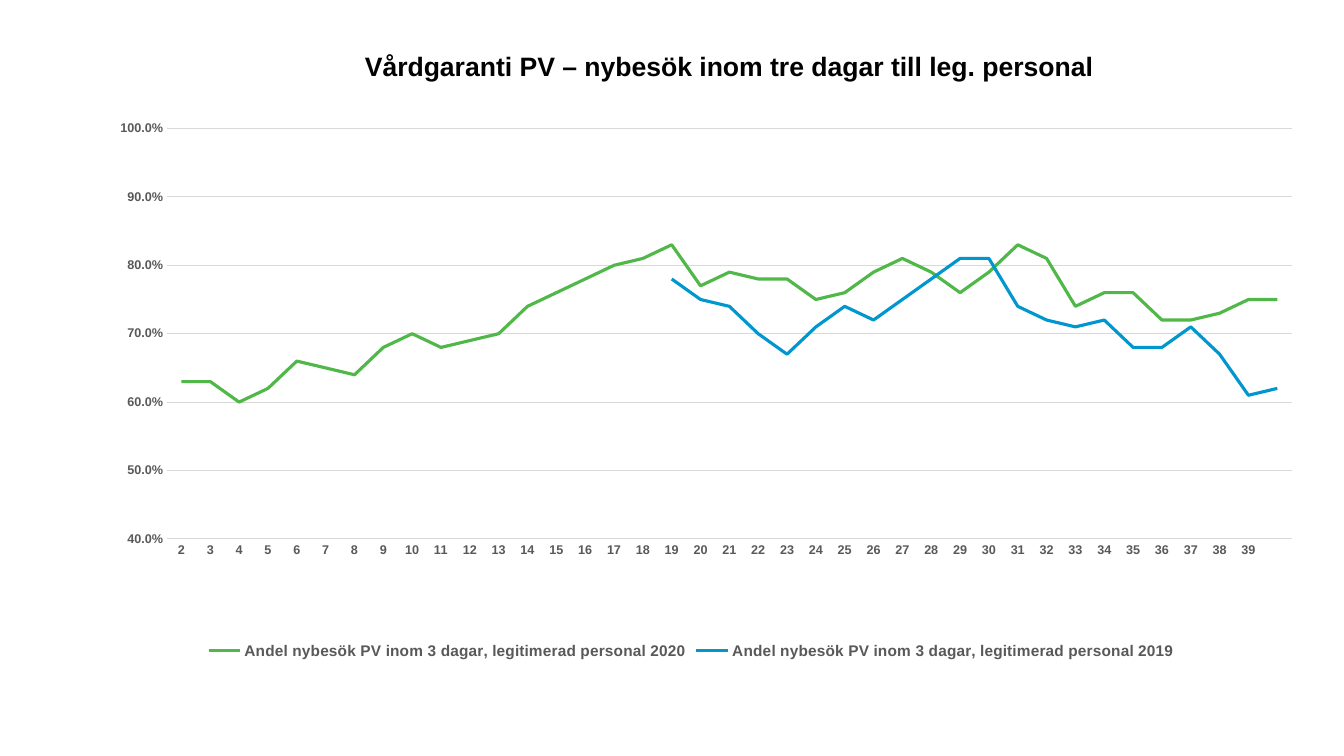
"""Build a slide with a line chart of weekly primary care visits within three days."""
from lxml.etree import SubElement
from pptx import Presentation
from pptx.chart.data import CategoryChartData as ChartData
from pptx.dml.color import RGBColor
from pptx.enum.chart import XL_CHART_TYPE as ChartType
from pptx.enum.chart import XL_LEGEND_POSITION as LegendPosition
from pptx.enum.chart import XL_MARKER_STYLE as Marker
from pptx.enum.chart import XL_TICK_MARK as Tick
from pptx.enum.text import MSO_ANCHOR as Anchor
from pptx.enum.text import PP_ALIGN as Align
from pptx.oxml.ns import qn
from pptx.util import Cm, Pt

COLORS = {"title": "000000", "label": "595959", "grid": "D9D9D9", "2020": "50B848", "2019": "0097CF"}
PERCENTAGES = {
    "2020": [63, 63, 60, 62, 66, 65, 64, 68, 70, 68, 69, 70, 74, 76, 78, 80, 81, 83, 77, 79,
             78, 78, 75, 76, 79, 81, 79, 76, 79, 83, 81, 74, 76, 76, 72, 72, 73, 75, 75],
    "2019": [None] * 17 + [78, 75, 74, 70, 67, 71, 74, 72, 75, 78, 81, 81, 74, 72, 71, 72,
                           68, 68, 71, 67, 61, 62],
}
PLOT_AREA = {"x": 0.079, "y": 0.037, "w": 0.903, "h": 0.739}


def style_font(font, size, color):
    font.name = "Arial"
    font.size = Pt(size)
    font.bold = True
    font.color.rgb = RGBColor.from_string(COLORS[color])


def style_line(line, width, color):
    line.width = Pt(width)
    line.color.rgb = RGBColor.from_string(COLORS[color])


deck = Presentation()
deck.slide_width, deck.slide_height = Cm(33.87), Cm(19.05)
page = deck.slides.add_slide(deck.slide_layouts.get_by_name("Title Only"))

title = page.shapes.title
title.left, title.top, title.width, title.height = Cm(8.94), Cm(1.12), Cm(20.19), Cm(1.07)
title.text_frame.text = "Vårdgaranti PV – nybesök inom tre dagar till leg. personal"
title.text_frame.vertical_anchor = Anchor.MIDDLE
para = title.text_frame.paragraphs[0]
para.alignment = Align.LEFT
style_font(para.font, 19, "title")

chart_data = ChartData(number_format="0.0%")
chart_data.categories = [str(week) for week in range(2, 40)]
for year, percentages in PERCENTAGES.items():
    shares = [None if value is None else value / 100 for value in percentages]
    chart_data.add_series(f"Andel nybesök PV inom 3 dagar, legitimerad personal {year}", shares)

chart = page.shapes.add_chart(
    ChartType.LINE, Cm(1.73), Cm(2.72), Cm(31.39), Cm(14), chart_data
).chart
chart.has_title = False
chart.font.name = "Arial"
chart.font.size = Pt(10)

chart.has_legend = True
chart.legend.position = LegendPosition.BOTTOM
chart.legend.include_in_layout = False
style_font(chart.legend.font, 11, "label")

week_axis, share_axis = chart.category_axis, chart.value_axis
for axis in (week_axis, share_axis):
    axis.major_tick_mark = axis.minor_tick_mark = Tick.NONE
    style_font(axis.tick_labels.font, 9, "label")
style_line(week_axis.format.line, 0.75, "grid")
share_axis.format.line.fill.background()
share_axis.minimum_scale, share_axis.maximum_scale, share_axis.major_unit = 0.4, 1, 0.1
share_axis.tick_labels.number_format = "0.0%"
share_axis.tick_labels.number_format_is_linked = False
style_line(share_axis.major_gridlines.format.line, 0.75, "grid")

plot = chart.plots[0]
plot.vary_by_categories = False
for year, series in zip(PERCENTAGES, plot.series):
    series.smooth = False
    series.marker.style = Marker.NONE
    style_line(series.format.line, 2.25, year)

plot_area = chart.element.find(".//" + qn("c:plotArea"))
layout = plot_area.find(qn("c:layout"))
if layout is None:
    layout = SubElement(plot_area, qn("c:layout"))
    plot_area.insert(0, layout)
manual = SubElement(layout, qn("c:manualLayout"))
settings = {"layoutTarget": "inner", "xMode": "edge", "yMode": "edge", **PLOT_AREA}
for setting, value in settings.items():
    SubElement(manual, qn(f"c:{setting}")).set("val", str(value))

deck.save("out.pptx")
